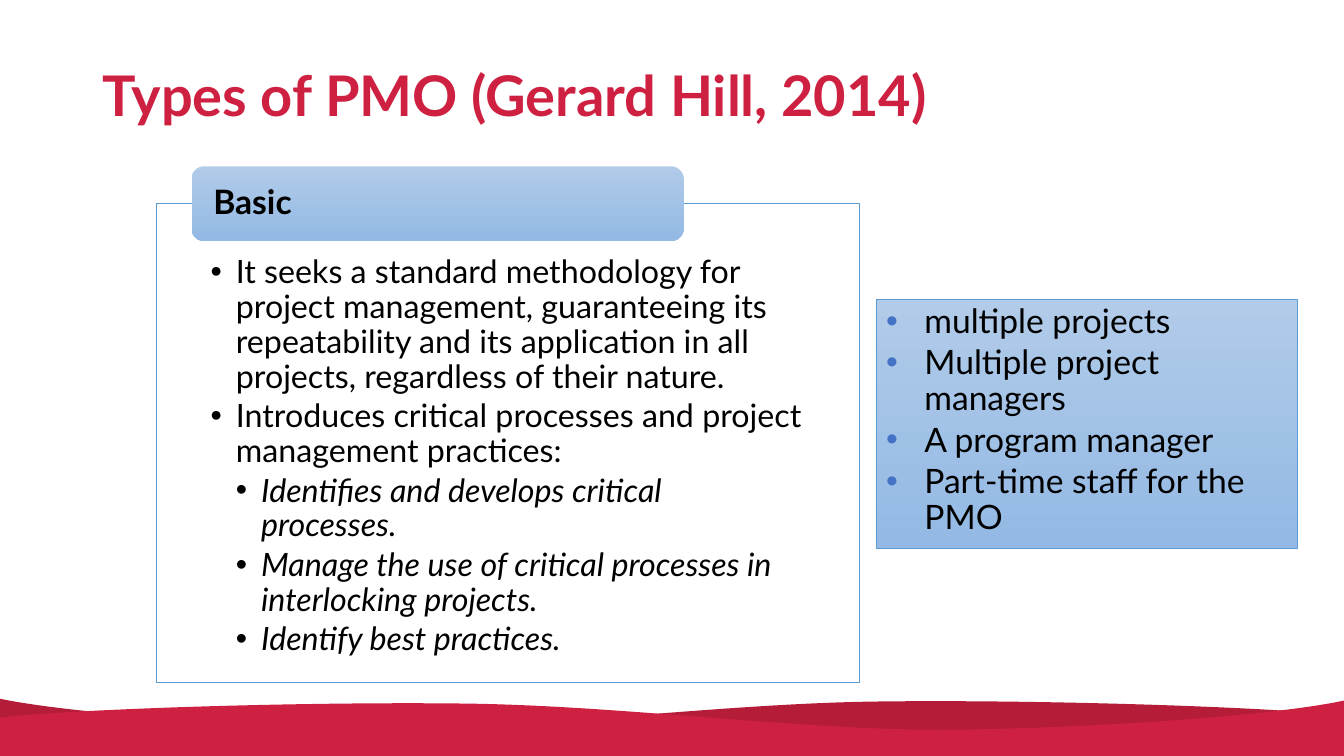
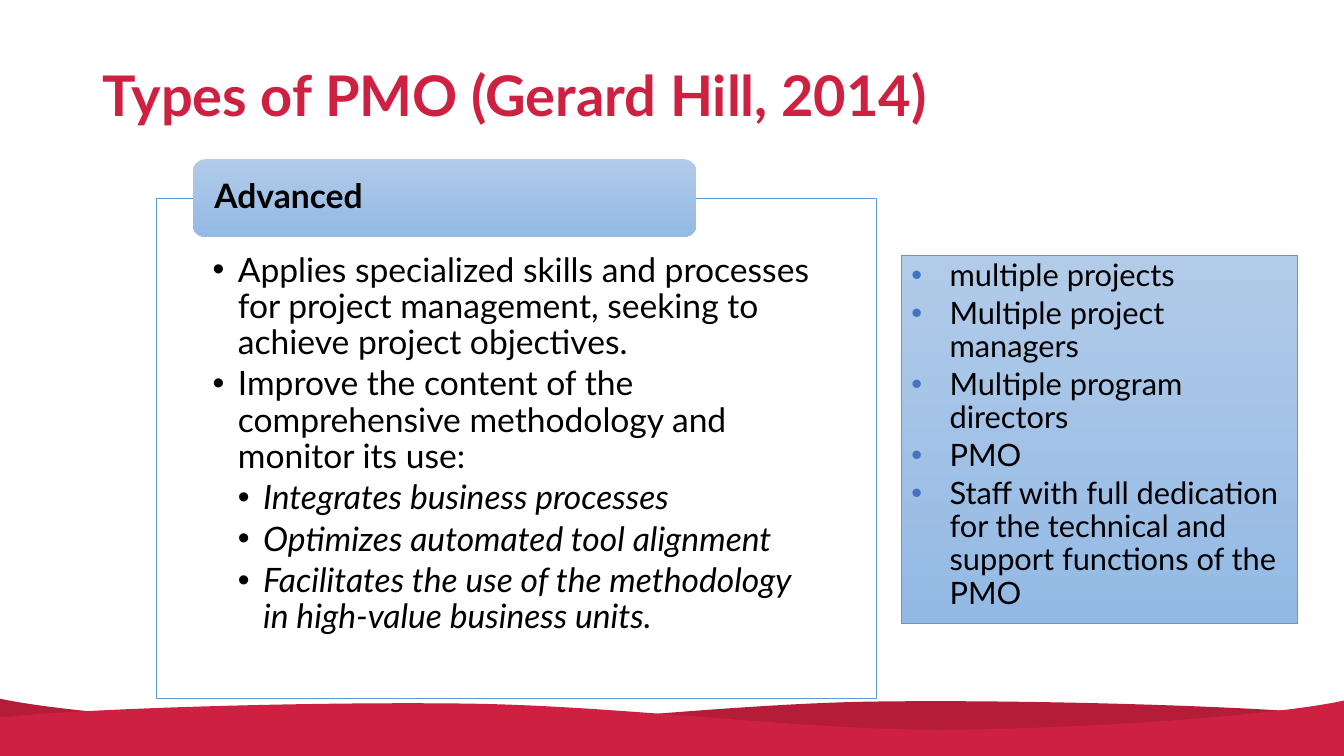
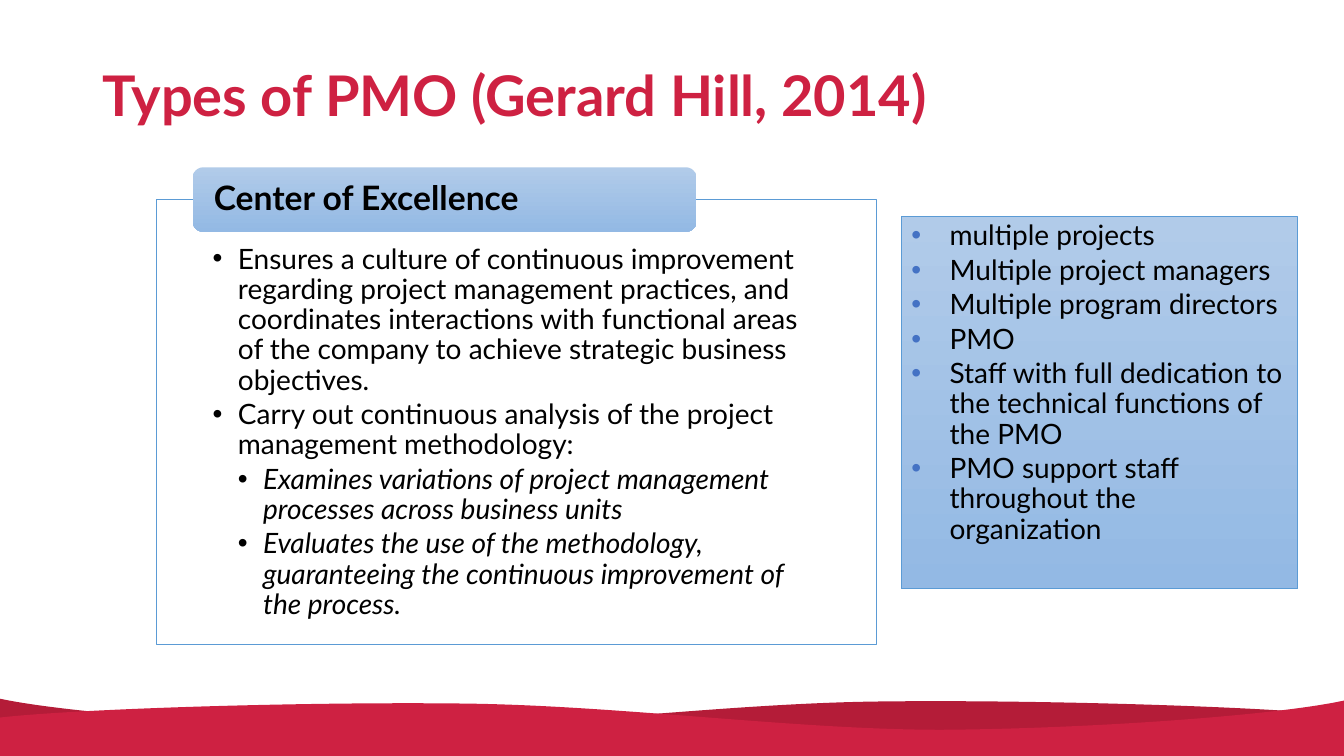
"""Three slides on types of PMO, each with a tagged panel and a staffing sidebar."""

from dataclasses import dataclass

from lxml import etree
from pptx import Presentation
from pptx import util as u
from pptx.dml.color import RGBColor
from pptx.enum import shapes, text
from pptx.oxml.ns import qn

PX = u.Inches(1) // 100
SLIDE_WIDTH, SLIDE_HEIGHT = 1333, 750
FRAME_LEFT = 155
SIDEBAR_RIGHT = 1287
INDENT = 25
SIDEBAR_INDENT = 38
TITLE = "Types of PMO (Gerard Hill, 2014)"
WAVE_START = (1333, 710)
WAVE_CURVES = (
    ((1256, 701), (1026, 694), (870, 696)),
    ((715, 698), (543, 722), (398, 722)),
    ((253, 721), (68, 708), (-1, 693)),
)


@dataclass(frozen=True)
class Theme:
    """Colours, font and type sizes."""

    red: str = "CE2142"
    dark_red: str = "B41C38"
    white: str = "FFFFFF"
    black: str = "000000"
    outline: str = "5B9BD5"
    bullet: str = "4472C4"
    gradient: tuple[str, str] = ("B1CBE9", "93B9E4")
    font: str = "Lato"
    title_size: int = 40
    tag_size: int = 24
    line_spacing: float = 0.9
    paragraph_gap: float = 0.15


@dataclass(frozen=True)
class Box:
    """A rectangle in px."""

    left: int
    top: int
    width: int
    height: int

    def emu(self) -> tuple[int, int, int, int]:
        """Return the rectangle in EMU."""
        return self.left * PX, self.top * PX, self.width * PX, self.height * PX


@dataclass(frozen=True)
class Panel:
    """An outlined frame with a tag on its top edge."""

    tag: str
    top: int
    width: int
    height: int
    tag_height: int
    size: int
    points: tuple[str, ...]
    subpoints: tuple[str, ...]


@dataclass(frozen=True)
class Sidebar:
    """A shaded list that ends at the right margin."""

    left: int
    top: int
    height: int
    size: int
    points: tuple[str, ...]


THEME = Theme()

SLIDES = (
    (
        Panel(
            "Basic", 202, 697, 475, 74, 23,
            (
                "It seeks a standard methodology for project management, guaranteeing its "
                "repeatability and its application in all projects, regardless of their nature.",
                "Introduces critical processes and project management practices:",
            ),
            (
                "Identifies and develops critical processes.",
                "Manage the use of critical processes in interlocking projects.",
                "Identify best practices.",
            ),
        ),
        Sidebar(
            869, 297, 247, 24,
            (
                "multiple projects",
                "Multiple project managers",
                "A program manager",
                "Part-time staff for the PMO",
            ),
        ),
    ),
    (
        Panel(
            "Advanced", 197, 714, 496, 77, 24,
            (
                "Applies specialized skills and processes for project management, "
                "seeking to achieve project objectives.",
                "Improve the content of the comprehensive methodology and monitor its use:",
            ),
            (
                "Integrates business processes",
                "Optimizes automated tool alignment",
                "Facilitates the use of the methodology in high-value business units.",
            ),
        ),
        Sidebar(
            894, 253, 366, 22,
            (
                "multiple projects",
                "Multiple project managers",
                "Multiple program directors",
                "PMO",
                "Staff with full dedication for the technical and support functions of the PMO",
            ),
        ),
    ),
    (
        Panel(
            "Center of Excellence", 198, 714, 441, 64, 20,
            (
                "Ensures a culture of continuous improvement regarding project management "
                "practices, and coordinates interactions with functional areas of the company "
                "to achieve strategic business objectives.",
                "Carry out continuous analysis of the project management methodology:",
            ),
            (
                "Examines variations of project management processes across business units",
                "Evaluates the use of the methodology, guaranteeing the continuous "
                "improvement of the process.",
            ),
        ),
        Sidebar(
            894, 215, 369, 20,
            (
                "multiple projects",
                "Multiple project managers",
                "Multiple program directors",
                "PMO",
                "Staff with full dedication to the technical functions of the PMO",
                "PMO support staff throughout the organization",
            ),
        ),
    ),
)


def rgb(colour: str) -> RGBColor:
    """Turn a hex string into a colour."""
    return RGBColor.from_string(colour)


def set_frame(shape, insets: tuple[int, int, int, int], anchor) -> None:
    """Set wrapping, insets and vertical anchor of a shape's text."""
    frame = shape.text_frame
    frame.word_wrap = True
    frame.auto_size = text.MSO_AUTO_SIZE.NONE
    frame.vertical_anchor = anchor
    left, top, right, bottom = (inset * PX for inset in insets)
    frame.margin_left, frame.margin_top = left, top
    frame.margin_right, frame.margin_bottom = right, bottom


def add_run(paragraph, words: str, size: int, colour: str = THEME.black,
            bold: bool = False, italic: bool = False) -> None:
    """Add one formatted run to a left-aligned paragraph."""
    paragraph.alignment = text.PP_ALIGN.LEFT
    paragraph.line_spacing = THEME.line_spacing
    run = paragraph.add_run()
    run.text = words
    font = run.font
    font.name, font.size = THEME.font, u.Pt(size)
    font.bold, font.italic = bold, italic
    font.color.rgb = rgb(colour)


def add_bullet(paragraph, margin: int, hanging: int, colour: str) -> None:
    """Give a paragraph a hanging round bullet."""
    properties = paragraph._p.get_or_add_pPr()
    properties.set("marL", str(margin * PX))
    properties.set("indent", str(-hanging * PX))
    bullet_colour = etree.SubElement(properties, qn("a:buClr"))
    etree.SubElement(bullet_colour, qn("a:srgbClr"), val=colour)
    etree.SubElement(properties, qn("a:buFont"), typeface="Arial")
    etree.SubElement(properties, qn("a:buChar"), char="•")


def add_list(shape, points: tuple[str, ...], size: int, indent: int, colour: str,
             subpoints: tuple[str, ...] = ()) -> None:
    """Fill a shape with points, then with italic subpoints one level deeper."""
    items = [(point, 1) for point in points] + [(point, 2) for point in subpoints]
    frame = shape.text_frame
    for index, (words, level) in enumerate(items):
        paragraph = frame.add_paragraph() if index else frame.paragraphs[0]
        paragraph.level = level
        paragraph.space_before = u.Pt(0)
        paragraph.space_after = u.Pt(round(size * THEME.paragraph_gap, 2))
        add_run(paragraph, words, size, italic=level == 2)
        add_bullet(paragraph, indent * level, indent, colour)


def add_box(slide, kind, box: Box, shaded: bool, outlined: bool):
    """Add a white or shaded shape, with or without an outline."""
    shape = slide.shapes.add_shape(kind, *box.emu())
    shape.shadow.inherit = False
    if shaded:
        shape.fill.gradient()
        shape.fill.gradient_angle = 270
        for stop, colour in zip(shape.fill.gradient_stops, THEME.gradient):
            stop.color.rgb = rgb(colour)
    else:
        shape.fill.solid()
        shape.fill.fore_color.rgb = rgb(THEME.white)
    if outlined:
        shape.line.color.rgb = rgb(THEME.outline)
        shape.line.width = u.Pt(0.5)
    else:
        shape.line.fill.background()
    return shape


def add_panel(slide, panel: Panel) -> None:
    """Draw the frame with its list, and the tag centred on its top edge."""
    frame_box = Box(FRAME_LEFT, panel.top, panel.width, panel.height)
    frame = add_box(slide, shapes.MSO_SHAPE.RECTANGLE, frame_box, False, True)
    side = round(panel.width * 0.078)
    set_frame(frame, (side, round(panel.tag_height * 0.7), side, 18), text.MSO_ANCHOR.TOP)
    add_list(frame, panel.points, panel.size, INDENT, THEME.black, panel.subpoints)

    tag_box = Box(FRAME_LEFT + round(panel.width * 0.05),
                  panel.top - (panel.tag_height + 1) // 2,
                  round(panel.width * 0.7), panel.tag_height)
    tag = add_box(slide, shapes.MSO_SHAPE.ROUNDED_RECTANGLE, tag_box, True, False)
    set_frame(tag, (18, 0, 18, 0), text.MSO_ANCHOR.MIDDLE)
    paragraph = tag.text_frame.paragraphs[0]
    add_run(paragraph, panel.tag, THEME.tag_size, bold=True)


def add_sidebar(slide, sidebar: Sidebar) -> None:
    """Draw the shaded list beside the panel."""
    box = Box(sidebar.left, sidebar.top, SIDEBAR_RIGHT - sidebar.left, sidebar.height)
    shape = add_box(slide, shapes.MSO_SHAPE.RECTANGLE, box, True, True)
    set_frame(shape, (10, 5, 10, 5), text.MSO_ANCHOR.TOP)
    add_list(shape, sidebar.points, sidebar.size, SIDEBAR_INDENT, THEME.bullet)


def set_title(slide) -> None:
    """Place and format the title."""
    title = slide.shapes.title
    title.left, title.top, title.width, title.height = Box(92, 25, 1150, 145).emu()
    set_frame(title, (10, 5, 10, 5), text.MSO_ANCHOR.MIDDLE)
    add_run(title.text_frame.paragraphs[0], TITLE, THEME.title_size, THEME.red, bold=True)


def bend_segments(shape) -> None:
    """Join each three leading line segments of a freeform into one cubic curve."""
    segments = list(shape.element.iter(qn("a:lnTo")))
    for index in range(len(WAVE_CURVES)):
        first, *others = segments[3 * index:3 * index + 3]
        first.tag = qn("a:cubicBezTo")
        for segment in others:
            first.append(segment[0])
            segment.getparent().remove(segment)


def add_waves(slide, layout) -> None:
    """Draw the wave and its mirrored twin, and move both to the layout."""
    wave = [WAVE_START]
    wave += [point for curve in WAVE_CURVES for point in curve]
    wave += [(-1, SLIDE_HEIGHT), (SLIDE_WIDTH, SLIDE_HEIGHT)]
    mirrored = [(SLIDE_WIDTH - 1 - x, min(y + 2, SLIDE_HEIGHT)) for x, y in wave]
    for points, colour in ((wave, THEME.dark_red), (mirrored, THEME.red)):
        start, *others = [(x * PX, y * PX) for x, y in points]
        builder = slide.shapes.build_freeform(*start)
        builder.add_line_segments(others, close=True)
        shape = builder.convert_to_shape()
        bend_segments(shape)
        shape.shadow.inherit = False
        shape.fill.solid()
        shape.fill.fore_color.rgb = rgb(colour)
        shape.line.fill.background()
        layout.shapes.element.append(shape.element)


def main() -> None:
    """Build and save the presentation."""
    presentation = Presentation()
    presentation.slide_width = SLIDE_WIDTH * PX
    presentation.slide_height = SLIDE_HEIGHT * PX
    layout = presentation.slide_layouts.get_by_name("Title Only")
    for index, (panel, sidebar) in enumerate(SLIDES):
        slide = presentation.slides.add_slide(layout)
        if index == 0:
            add_waves(slide, layout)
        set_title(slide)
        add_panel(slide, panel)
        add_sidebar(slide, sidebar)
    presentation.save("out.pptx")


if __name__ == "__main__":
    main()
